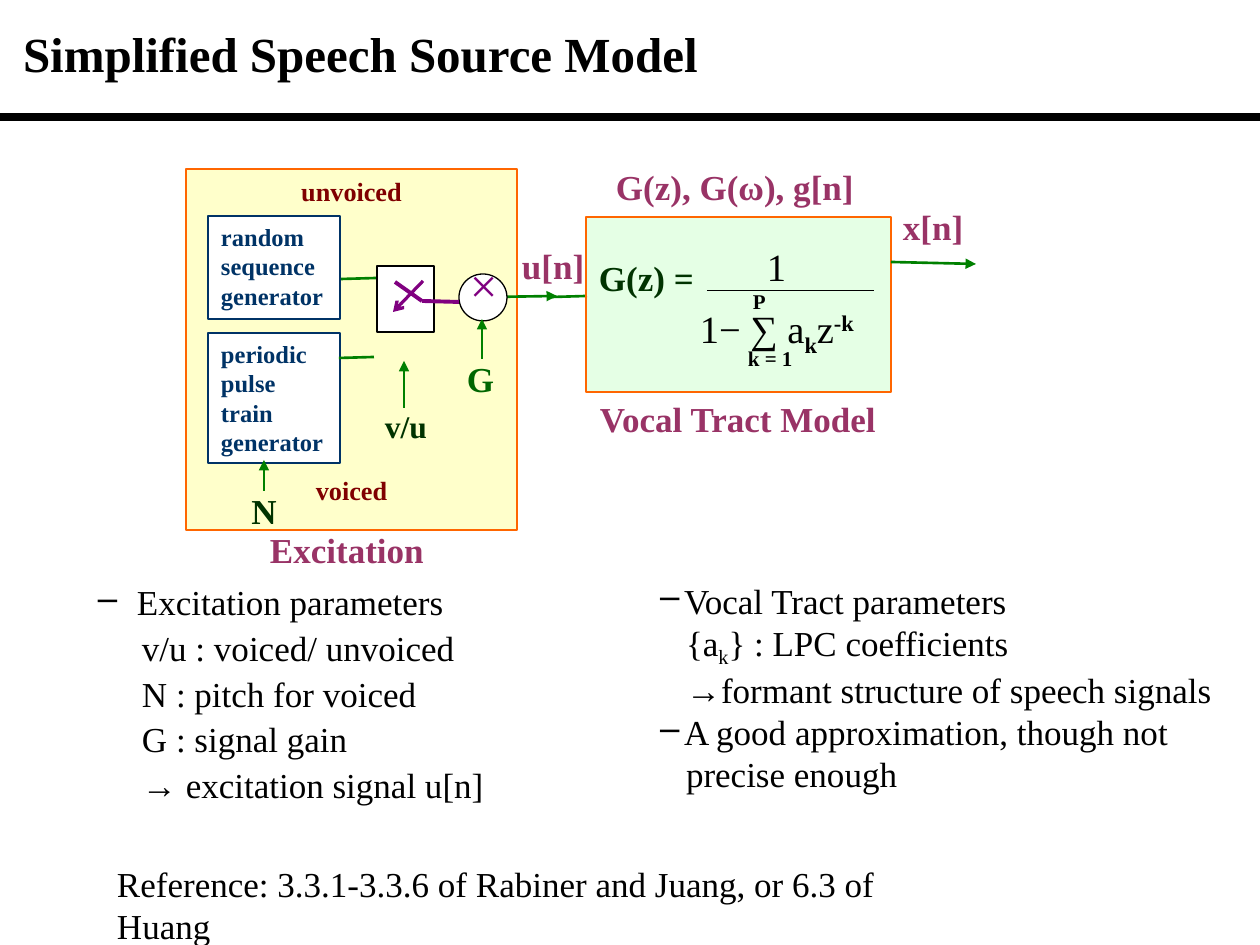
from lxml import etree
from pptx import Presentation
from pptx import util as u
from pptx.dml.color import RGBColor
from pptx.enum import shapes, text
from pptx.oxml.ns import qn

FONT = "Times New Roman"
BLACK, WHITE, NAVY, MAROON = "000000", "FFFFFF", "003366", "800000"
GREEN, DARK_GREEN, PURPLE, PLUM, ORANGE = "008000", "003300", "800080", "993366", "FF6600"
LEFT, CENTER = text.PP_ALIGN.LEFT, text.PP_ALIGN.CENTER
RECTANGLE, OVAL = shapes.MSO_SHAPE.RECTANGLE, shapes.MSO_SHAPE.OVAL


def px(length):
    return u.Emu(round(length * 914400 / 126))


def color(value):
    return RGBColor.from_string(value)


def add_runs(paragraph, content, size, ink, bold):
    """Content is a string, or a list of (text, baseline percent, bold) runs."""
    if isinstance(content, str):
        content = [(content, 0, bold)]
    for words, baseline, heavy in content:
        run = paragraph.add_run()
        run.text = words
        run.font.name, run.font.size, run.font.bold = FONT, u.Pt(size), heavy
        run.font.color.rgb = color(ink)
        if baseline:
            run.font._element.set("baseline", str(baseline * 1000))


def write(shape, lines, size, ink, bold=False, align=LEFT, insets=(13, 6)):
    """Fill a shape with one paragraph per line and return the paragraphs."""
    frame = shape.text_frame
    frame.word_wrap = True
    frame.vertical_anchor = text.MSO_ANCHOR.TOP
    frame.margin_left = frame.margin_right = px(insets[0])
    frame.margin_top = frame.margin_bottom = px(insets[1])
    for index, content in enumerate(lines):
        paragraph = frame.add_paragraph() if index else frame.paragraphs[0]
        paragraph.alignment = align
        add_runs(paragraph, content, size, ink, bold)
    return frame.paragraphs


def add_text(slide, box, lines, size, ink, **style):
    shape = slide.shapes.add_textbox(*map(px, box))
    return write(shape, lines, size, ink, **style)


def add_label(slide, left, top, width, words, ink=PLUM, size=20, align=LEFT):
    add_text(slide, (left, top, width, 73), [words], size, ink, bold=True, align=align)


def add_box(slide, box, fill, outline, kind=RECTANGLE, opacity=100):
    shape = slide.shapes.add_shape(kind, *map(px, box))
    shape.shadow.inherit = False
    shape.fill.solid()
    shape.fill.fore_color.rgb = color(fill)
    if opacity < 100:
        solid = shape._element.spPr.find(qn("a:solidFill"))
        etree.SubElement(solid[0], qn("a:alpha"), val=str(opacity * 1000))
    shape.line.color.rgb = color(outline)
    shape.line.width = u.Pt(0.75)
    return shape


def add_line(slide, points, ink=GREEN, width=1.5, head=None):
    line = slide.shapes.add_connector(shapes.MSO_CONNECTOR.STRAIGHT, *map(px, points))
    line.line.color.rgb = color(ink)
    line.line.width = u.Pt(width)
    if head:
        etree.SubElement(line.line._get_or_add_ln(), qn("a:tailEnd"), type=head)
    etree.SubElement(line._element.spPr, qn("a:effectLst"))


def indent(paragraph, margin, hanging=0):
    properties = paragraph._p.get_or_add_pPr()
    properties.set("marL", str(px(margin)))
    properties.set("indent", str(-px(hanging)))
    return properties


def add_dash_list(slide, box, lines, margins, hanging, gap=0):
    """Lines are (has dash, content); margins are for dashed and plain lines."""
    paragraphs = add_text(slide, box, [content for _, content in lines], 20, BLACK)
    for paragraph, (dashed, _) in zip(paragraphs, lines):
        paragraph.space_before = u.Pt(gap)
        if dashed:
            properties = indent(paragraph, margins[0], hanging)
            etree.SubElement(properties, qn("a:buChar"), char="–")
        else:
            indent(paragraph, margins[1])


def add_title(slide):
    add_line(slide, (0, 117, 1260, 117), BLACK, 4.5)
    title = slide.shapes.add_textbox(*map(px, (10, 10, 1240, 94)))
    write(title, ["Simplified Speech Source Model"], 28, BLACK, bold=True)[0].line_spacing = 0.9
    title.text_frame.vertical_anchor = text.MSO_ANCHOR.MIDDLE


def add_excitation(slide):
    panel = add_box(slide, (186, 169, 331, 361), "FFFF99", ORANGE, opacity=50)
    voicing = write(panel, ["unvoiced", "voiced"], 15, MAROON, bold=True, align=CENTER)
    voicing[1].space_before = u.Pt(153)

    add_line(slide, (491, 297, 557, 296), head="triangle")
    add_line(slide, (552, 297, 587, 296))
    generators = [
        (216, 103, ["random", "sequence", "generator"]),
        (333, 130, ["periodic pulse train", "generator"]),
    ]
    for top, height, lines in generators:
        box = add_box(slide, (208, top, 132, height), WHITE, NAVY)
        write(box, lines, 14, NAVY, bold=True)

    add_line(slide, (339, 358, 374, 357))
    add_box(slide, (377, 266, 57, 66), WHITE, BLACK)
    add_line(slide, (341, 279, 376, 278))
    add_box(slide, (459, 274, 48, 47), WHITE, BLACK, OVAL)
    add_line(slide, (423, 281, 393, 312), PURPLE, 1.8, "arrow")
    add_line(slide, (395, 282, 422, 301), PURPLE, 2.25)
    add_line(slide, (422, 301, 459, 302), PURPLE, 2.25)
    add_text(slide, (457, 249, 53, 66), ["×"], 28, PURPLE)

    for arrow in [(404, 408, 404, 361), (264, 491, 264, 460), (482, 359, 482, 319)]:
        add_line(slide, arrow, head="triangle")
    add_label(slide, 454, 352, 88, "G", "006600")
    add_label(slide, 372, 401, 88, "v/u", DARK_GREEN, 18)
    add_label(slide, 220, 484, 88, "N", DARK_GREEN, align=CENTER)
    add_label(slide, 257, 523, 189, "Excitation")
    add_label(slide, 509, 239, 91, "u[n]")


def add_vocal_tract(slide):
    panel = add_box(slide, (586, 217, 305, 175), "CCFFCC", ORANGE, opacity=50)
    write(panel, ["G(z) ="], 20, DARK_GREEN, bold=True, insets=(13, 40))
    denominator = [("1− ∑ a", 0, False), ("k", -25, True),
                   ("z", 0, False), ("-k", 30, True)]
    fraction = add_text(slide, (687, 237, 199, 126), ["1", denominator], 22, BLACK)
    indent(fraction[0], 67)
    fraction[0].space_after = u.Pt(9)
    add_line(slide, (707, 290, 874, 290), BLACK, 0.25)
    limits = add_text(slide, (740, 288, 73, 101), ["P", "k = 1"], 12, BLACK,
                      bold=True, insets=(8, 1))
    indent(limits[0], 5)
    limits[1].space_before = u.Pt(18)

    add_line(slide, (891, 262, 976, 264), head="triangle")
    add_label(slide, 890, 200, 92, "x[n]")
    add_label(slide, 603, 160, 280, "G(z), G(ω), g[n]")
    add_label(slide, 587, 392, 319, "Vocal Tract Model")


def main():
    presentation = Presentation()
    presentation.slide_width, presentation.slide_height = px(1260), px(945)
    slide = presentation.slides.add_slide(presentation.slide_layouts[6])
    add_title(slide)
    add_excitation(slide)
    add_vocal_tract(slide)
    add_dash_list(slide, (11, 575, 595, 239), [
        (True, "Excitation parameters"),
        (False, "v/u : voiced/ unvoiced"),
        (False, "N : pitch for voiced"),
        (False, "G : signal gain"),
        (False, "→ excitation signal u[n]"),
    ], margins=(113, 118), hanging=39, gap=2)
    add_dash_list(slide, (622, 573, 622, 223), [
        (True, "Vocal Tract parameters"),
        (False, [("{a", 0, False), ("k", -25, False), ("} : LPC coefficients", 0, False)]),
        (False, "→formant structure of speech signals"),
        (True, "A good approximation, though not"),
        (False, "precise enough"),
    ], margins=(49, 51), hanging=24)
    add_text(slide, (104, 856, 870, 54),
             ["Reference: 3.3.1-3.3.6 of Rabiner and Juang, or 6.3 of Huang"], 20, BLACK)
    presentation.save("out.pptx")


if __name__ == "__main__":
    main()
